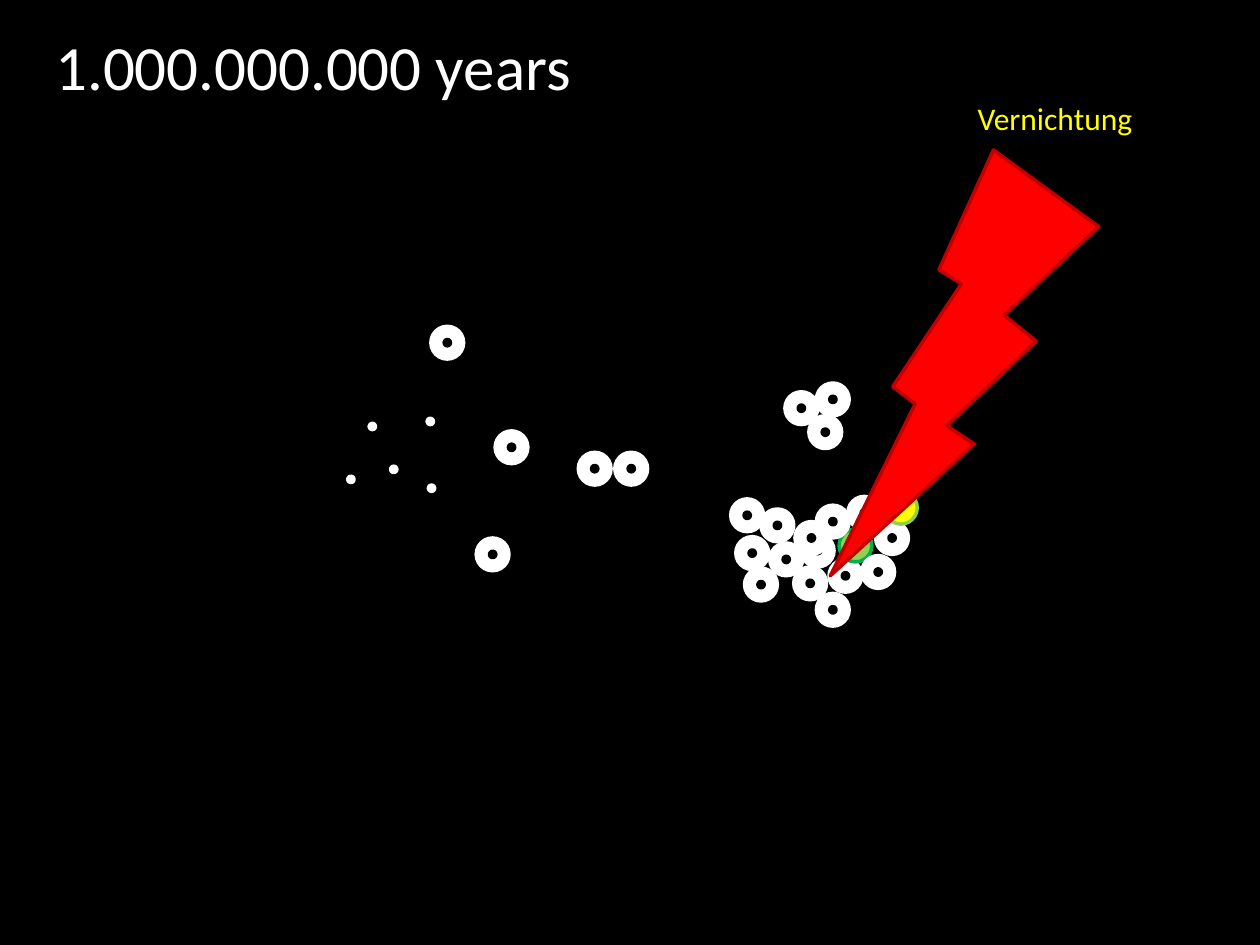
import pptx
import pptx.dml.color
import pptx.enum.shapes
import pptx.enum.text
import pptx.util

Inches = pptx.util.Inches
Pt = pptx.util.Pt
SHAPES = pptx.enum.shapes.MSO_SHAPE
TEXT = pptx.enum.text

COLORS = {
    "black": "000000",
    "white": "FFFFFF",
    "green": "92D050",
    "dark_green": "00B050",
    "yellow": "FFFF00",
    "red": "FF0000",
    "dark_red": "C00000",
}
FONT = "Calibri"
CELL_SIZE = 0.26
DOT_SIZE = 0.05

CELL_STYLES = {
    "normal": (("white", "white"), ("black", "black")),
    "green": (("green", "dark_green"), ("green", "dark_green")),
    "yellow": (("yellow", "green"), ("yellow", "green")),
}

LOOSE_DOTS = [(0.34, 1.11), (0.63, 0.73), (0, 1.19), (0.17, 0.77), (0.64, 1.26)]
LOOSE_CELLS = [(1.17, 0.83), (1.83, 1), (0.66, 0), (1.02, 1.68), (2.12, 1)]
TRIO_CELLS = [(0, 0.07), (0.19, 0.26), (0.25, 0)]
COLONY_CELLS = [
    (0.31, 0.41), (0.5, 0.6), (0.56, 0.34), (0.78, 0.54),
    (0.68, 0.81), (0.86, 0.3, "green"), (0.68, 0.11), (0.93, 0.04),
    (1.15, 0.24), (1.04, 0.51), (1.22, 0, "yellow"), (0.11, 0.61),
    (0.04, 0.36), (0.24, 0.14), (0.51, 0.24), (0, 0.06),
]


def rgb(name):
    return pptx.dml.color.RGBColor.from_string(COLORS[name])


def add_filled_shape(slide, kind, box, fill, line):
    shape = slide.shapes.add_shape(kind, *map(Inches, box))
    shape.shadow.inherit = False
    shape.fill.solid()
    shape.fill.fore_color.rgb = rgb(fill)
    shape.line.color.rgb = rgb(line)
    shape.line.width = Pt(2)
    return shape


def set_text(shape, text, size, color):
    shape.text_frame.text = text
    paragraph = shape.text_frame.paragraphs[0]
    paragraph.alignment = TEXT.PP_ALIGN.LEFT
    font = paragraph.runs[0].font
    font.name = FONT
    font.size = Pt(size)
    font.color.rgb = rgb(color)


def add_circle(slide, left, top, size, colors):
    add_filled_shape(slide, SHAPES.OVAL, (left, top, size, size), *colors)


def add_cell(slide, left, top, style="normal"):
    body, nucleus = CELL_STYLES[style]
    inset = (CELL_SIZE - DOT_SIZE) / 2
    add_circle(slide, left, top, CELL_SIZE, body)
    add_circle(slide, left + inset, top + inset, DOT_SIZE, nucleus)


def add_cluster(slide, left, top, cells, dots=()):
    for x, y in dots:
        add_circle(slide, left + x, top + y, DOT_SIZE, ("white", "white"))
    for x, y, *style in cells:
        add_cell(slide, left + x, top + y, *style)


def add_bolt(slide, box):
    bolt = add_filled_shape(slide, SHAPES.LIGHTNING_BOLT, box, "red", "dark_red")
    bolt._element.spPr.xfrm.set("flipH", "1")


def add_title(slide, box):
    title = add_filled_shape(slide, SHAPES.RECTANGLE, box, "black", "black")
    title.text_frame.vertical_anchor = TEXT.MSO_ANCHOR.MIDDLE
    set_text(title, "1.000.000.000 years", 36, "white")


def add_bolt_label(slide, box):
    label = slide.shapes.add_textbox(*map(Inches, box))
    label.text_frame.word_wrap = False
    label.text_frame.auto_size = TEXT.MSO_AUTO_SIZE.SHAPE_TO_FIT_TEXT
    set_text(label, "Vernichtung", 18, "yellow")


def main():
    presentation = pptx.Presentation()
    presentation.slide_width = Inches(10)
    presentation.slide_height = Inches(7.5)
    slide = presentation.slides.add_slide(presentation.slide_layouts[6])
    slide.background.fill.solid()
    slide.background.fill.fore_color.rgb = rgb("black")

    add_cluster(slide, 2.76, 2.59, LOOSE_CELLS, LOOSE_DOTS)
    add_cluster(slide, 6.23, 3.04, TRIO_CELLS)
    add_cluster(slide, 5.8, 3.9, COLONY_CELLS)
    add_bolt(slide, (6.59, 1.19, 2.13, 3.38))
    add_title(slide, (0.34, 0.3, 4.61, 0.44))
    add_bolt_label(slide, (7.66, 0.74, 1.45, 0.4))
    presentation.save("out.pptx")


if __name__ == "__main__":
    main()
